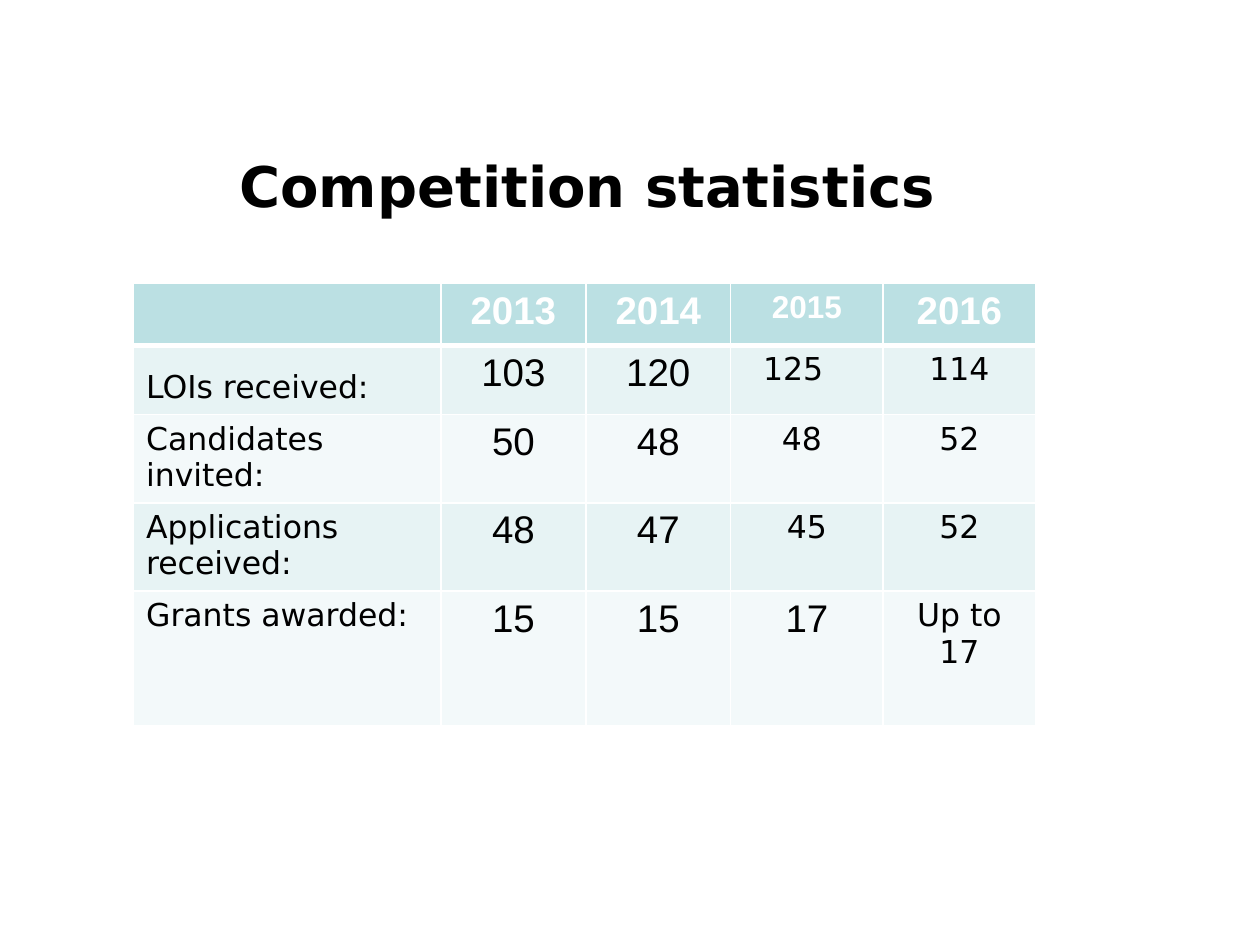
from lxml import etree
from pptx import Presentation
from pptx.dml.color import RGBColor
from pptx.enum.text import PP_ALIGN
from pptx.oxml.ns import qn
from pptx.util import Inches, Pt

HEADER_FILL = "BBE0E3"
BAND_FILLS = ["E7F3F4", "F3F9FA"]
COLUMN_WIDTHS = [2.44, 1.15, 1.15, 1.21, 1.21]
ROW_HEIGHTS = [0.49, 0.54, 0.7, 0.7, 1.07]
STATISTICS = [
    ["", "2013", "2014", "2015", "2016"],
    ["LOIs received:", "103", "120", "125", "114"],
    ["Candidates invited:", "50", "48", "48", "52"],
    ["Applications received:", "48", "47", "45", "52"],
    ["Grants awarded:", "15", "15", "17", "Up to 17"],
]
LARGE_FIGURES = {(0, 4), (4, 3)}  # large text outside the 2013 and 2014 columns
RIGHT_MARGINS = {(1, 3): 0.32, (2, 3): 0.18}  # figures set left of centre


def add_run(paragraph, text, font_name, size, color, bold=False):
    run = paragraph.add_run()
    run.text = text
    run.font.name = font_name
    run.font.size = Pt(size)
    run.font.bold = bold
    run.font.color.rgb = RGBColor.from_string(color)


def add_white_borders(cell, bottom_width):
    """Put the lines before the cell fill, as the schema requires."""
    properties = cell._tc.get_or_add_tcPr()
    sides = [("a:lnL", 1), ("a:lnR", 1), ("a:lnT", 1), ("a:lnB", bottom_width)]
    for position, (tag, width) in enumerate(sides):
        line = etree.Element(qn(tag), w=str(Pt(width)))
        fill = etree.SubElement(line, qn("a:solidFill"))
        etree.SubElement(fill, qn("a:srgbClr"), val="FFFFFF")
        properties.insert(position, line)


presentation = Presentation()
presentation.slide_width = Inches(10)
presentation.slide_height = Inches(7.5)
slide = presentation.slides.add_slide(presentation.slide_layouts[6])

title = slide.shapes.add_textbox(Inches(1.34), Inches(1.15), Inches(7.84), Inches(0.64))
title.text_frame.word_wrap = True
title.text_frame.margin_left = Inches(0.56)
add_run(title.text_frame.paragraphs[0], "Competition statistics",
        "DejaVu Sans", 32, "000000", bold=True)

table = slide.shapes.add_table(
    len(ROW_HEIGHTS), len(COLUMN_WIDTHS), Inches(1.06), Inches(2.25),
    Inches(sum(COLUMN_WIDTHS)), Inches(sum(ROW_HEIGHTS))).table
for column, width in zip(table.columns, COLUMN_WIDTHS):
    column.width = Inches(width)
for row, height in zip(table.rows, ROW_HEIGHTS):
    row.height = Inches(height)

for r, values in enumerate(STATISTICS):
    is_header = r == 0
    for c, value in enumerate(values):
        cell = table.cell(r, c)
        cell.fill.solid()
        cell.fill.fore_color.rgb = RGBColor.from_string(
            HEADER_FILL if is_header else BAND_FILLS[(r - 1) % 2])
        add_white_borders(cell, 3 if is_header else 1)
        if not value:
            continue
        paragraph = cell.text_frame.paragraphs[0]
        if c > 0:
            paragraph.alignment = PP_ALIGN.CENTER
        if (r, c) == (1, 0):
            paragraph.line_spacing = 1.5
        if (r, c) in RIGHT_MARGINS:
            cell.margin_right = Inches(RIGHT_MARGINS[r, c])
        is_large = c in (1, 2) or (r, c) in LARGE_FIGURES
        add_run(paragraph, value,
                "Arial" if is_header or is_large else "DejaVu Sans",
                22 if is_large else 18,
                "FFFFFF" if is_header else "000000", bold=is_header)

presentation.save("out.pptx")
